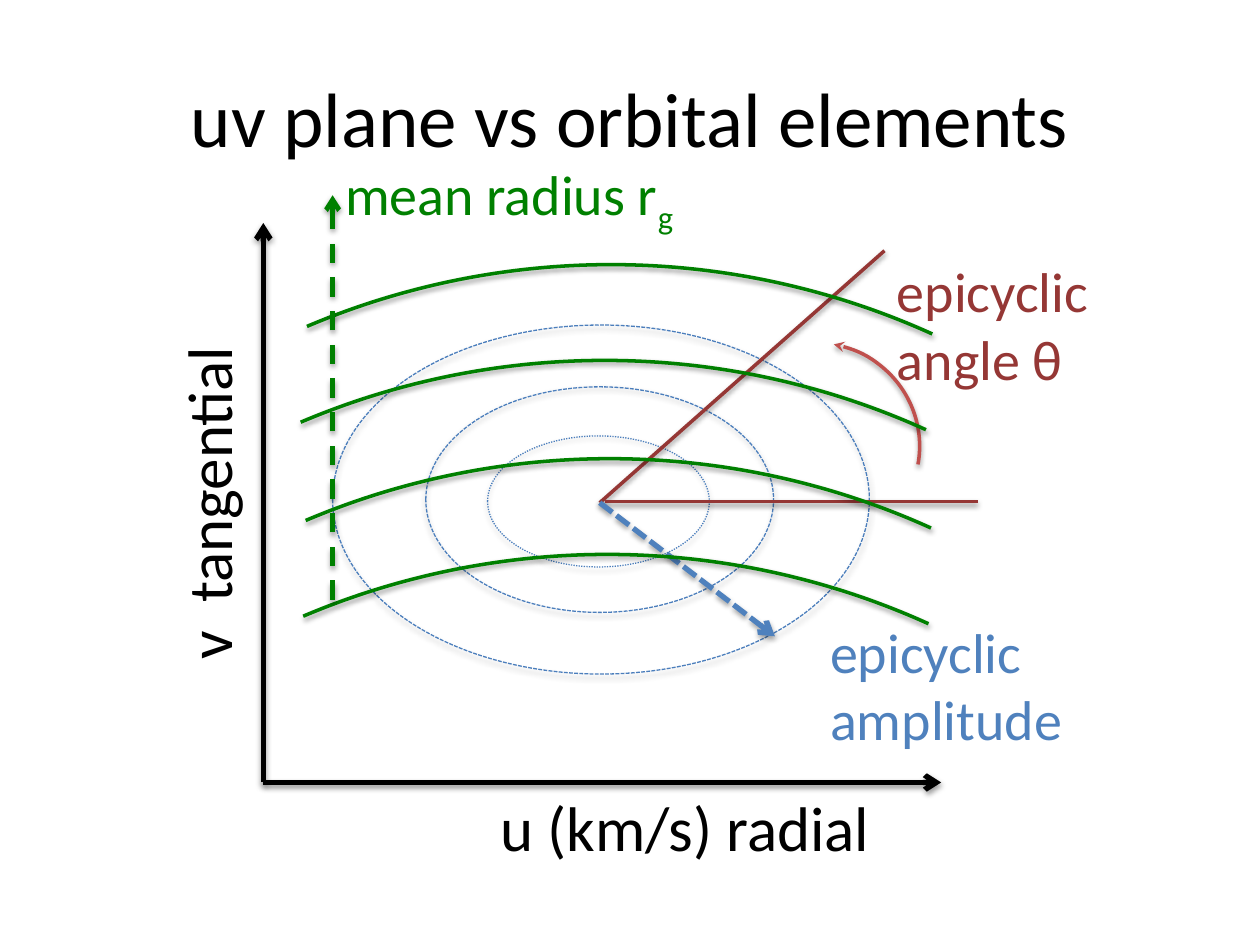
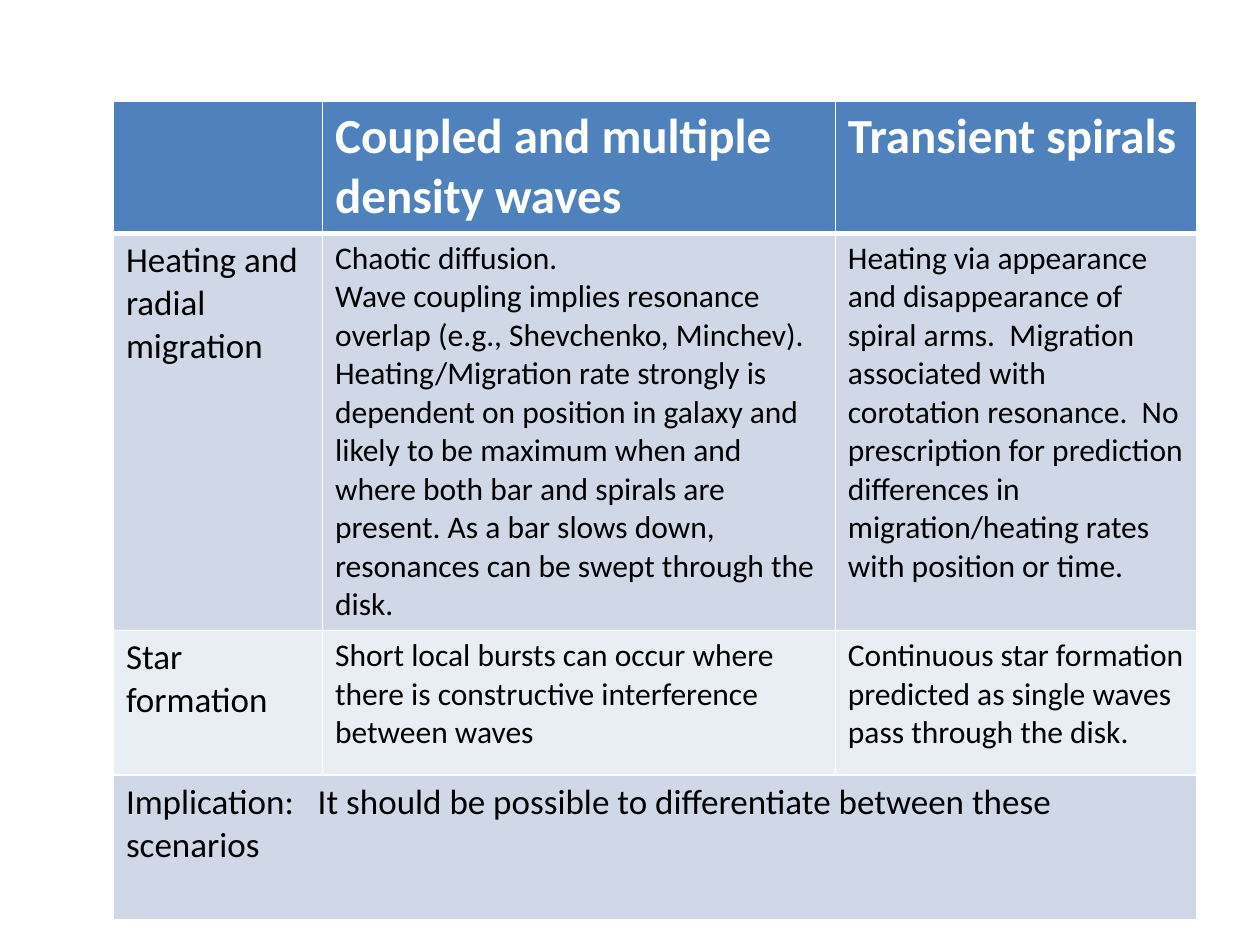
from lxml import etree
from pptx import Presentation
from pptx.dml.color import RGBColor
from pptx.enum.dml import MSO_LINE
from pptx.enum.shapes import MSO_CONNECTOR, MSO_SHAPE
from pptx.enum.text import MSO_ANCHOR, PP_ALIGN
from pptx.oxml import parse_xml
from pptx.oxml.ns import nsdecls, qn
from pptx.util import Inches, Pt

STRAIGHT = MSO_CONNECTOR.STRAIGHT
ARC, OVAL = MSO_SHAPE.ARC, MSO_SHAPE.OVAL
DASH, SHORT, DOT = MSO_LINE.DASH, MSO_LINE.SQUARE_DOT, MSO_LINE.ROUND_DOT
MIDDLE, CENTER = MSO_ANCHOR.MIDDLE, PP_ALIGN.CENTER

HEX = {
    "black": "000000", "white": "FFFFFF", "ring": "4B7EBC",
    "blue": "4F81BD", "red": "953735", "rose": "C0504D",
    "green": "008000", "band": "D0D8E8", "pale": "E9EDF4",
}
HEAD = {"size": Pt(28), "bold": True}
LABEL = {"size": Pt(20), "bold": False}
BODY = {"size": Pt(18), "bold": False}

ROWS = [
    ["", "Coupled and multiple density waves", "Transient spirals"],
    ["Heating and radial migration",
     "Chaotic diffusion.\n"
     "Wave coupling implies resonance overlap (e.g., Shevchenko, Minchev). "
     "Heating/Migration rate strongly is dependent on position in galaxy and "
     "likely to be maximum when and where both bar and spirals are present. "
     "As a bar slows down, resonances can be swept through the disk.",
     "Heating via appearance and disappearance of spiral arms.  Migration "
     "associated with corotation resonance.  No prescription for prediction "
     "differences in migration/heating rates with position or time."],
    ["Star formation",
     "Short local bursts can occur where there is constructive interference "
     "between waves",
     "Continuous star formation predicted as single waves pass through the "
     "disk."],
    ["Implication:   It should be possible to differentiate between these  "
     "scenarios", "", ""],
]


def color(name):
    return RGBColor.from_string(HEX[name])


def style(font, hue, form):
    for key, value in {"name": "Calibri", **form}.items():
        setattr(font, key, value)
    font.color.rgb = color(hue)


def shade(shape, tone=38, gap=1.6):
    shape._element.spPr.append(parse_xml(
        f'<a:effectLst {nsdecls("a")}><a:outerShdw blurRad="{Pt(3.1)}" '
        f'dist="{Pt(gap)}" dir="5400000" rotWithShape="0">'
        f'<a:srgbClr val="{HEX["black"]}"><a:alpha val="{tone * 1000}"/>'
        '</a:srgbClr></a:outerShdw></a:effectLst>'))


def stroke(shape, hue, width, dash=None, end=None, tip="arrow"):
    line = shape.line
    line.color.rgb = color(hue)
    line.width = Pt(width)
    if dash:
        line.dash_style = dash
    if end:
        etree.SubElement(line._get_or_add_ln(), qn(f"a:{end}"), type=tip)


def ray(slide, start, stop, hue, width, dash=None, end=None):
    points = [Inches(v) for v in (*start, *stop)]
    line = slide.shapes.add_connector(STRAIGHT, *points)
    stroke(line, hue, width, dash, end)
    shade(line)


def curve(slide, kind, box, hue, width, turn=0, span=(), **form):
    shape = slide.shapes.add_shape(kind, *[Inches(v) for v in box])
    shape.rotation = turn
    for i, value in enumerate(span):
        shape.adjustments[i] = value
    shape.fill.background()
    stroke(shape, hue, width, **form)
    if kind == OVAL:
        shade(shape, 35, 1.8)
    else:
        shade(shape)


def label(slide, box, text, size, hue, turn=0, sub=""):
    shape = slide.shapes.add_textbox(*[Inches(v) for v in box])
    shape.rotation = turn
    frame = shape.text_frame
    frame.word_wrap = True
    para = frame.paragraphs[0]
    for part in filter(None, (text, sub)):
        run = para.add_run()
        run.text = part
        style(run.font, hue, {"size": Pt(size)})
    if sub:
        run._r.get_or_add_rPr().set("baseline", "-25000")
    return frame


def border(cell, row):
    props = cell._tc.get_or_add_tcPr()
    thick = {(0, "B"): 3, (1, "T"): 3}
    for side in "LRTB":
        width = Pt(thick.get((row, side), 1))
        props.append(parse_xml(
            f'<a:ln{side} {nsdecls("a")} w="{width}"><a:solidFill>'
            f'<a:srgbClr val="{HEX["white"]}"/></a:solidFill></a:ln{side}>'))


def plane(slide):
    title = label(slide, (0.5, 0.3, 9, 1.25),
                  "uv plane vs orbital elements", 44, "black")
    title.vertical_anchor = MIDDLE
    title.paragraphs[0].alignment = CENTER

    for tip in ((7.47, 6.21), (2.09, 1.77)):
        ray(slide, (2.09, 6.21), tip, "black", 3, end="tailEnd")
    for box, dash in (((3.38, 3.07, 2.76, 1.79), SHORT),
                      ((3.87, 3.46, 1.76, 1.04), DOT),
                      ((2.64, 2.58, 4.26, 2.77), SHORT)):
        curve(slide, OVAL, box, "ring", 0.75, dash=dash)
    label(slide, (3.87, 6.21, 3.89, 0.71), "u (km/s) radial", 36, "black")
    label(slide, (-0.03, 3.3, 3.36, 0.71), "v  tangential", 36, "black", 270)

    ray(slide, (4.76, 3.99), (7.02, 1.99), "red", 2)
    ray(slide, (4.8, 3.98), (7.76, 3.98), "red", 2)
    label(slide, (7.02, 1.99, 2.53, 1.18), "epicyclic angle θ", 32, "red")
    curve(slide, ARC, (5.64, 2.72, 1.66, 1.63), "rose", 2, 10.5,
          end="headEnd", tip="stealth")
    ray(slide, (4.76, 3.99), (6.15, 5.05), "blue", 3, SHORT, "tailEnd")
    label(slide, (6.49, 4.85, 2.53, 1.18), "epicyclic amplitude", 32, "blue")

    for left, top in ((-1.38, 2.86), (-1.33, 2.1),
                      (-1.34, 3.64), (-1.36, 4.4)):
        curve(slide, ARC, (left, top, 12.36, 12.36), "green", 2, 315,
              (175.21, 203.62))
    ray(slide, (2.64, 4.76), (2.64, 1.55), "green", 2.75, DASH, "tailEnd")
    label(slide, (2.64, 1.22, 6.55, 0.64), "mean radius r", 32, "green",
          sub="g")


def grid(slide):
    widths, heights = (1.66, 4.07, 2.87), (0.99, 2.69, 1.15, 1.15)
    box = [Inches(v) for v in (0.9, 0.8, sum(widths), sum(heights))]
    table = slide.shapes.add_table(len(heights), len(widths), *box).table
    for col, width in zip(table.columns, widths):
        col.width = Inches(width)
    for row, height in zip(table.rows, heights):
        row.height = Inches(height)
    fills = ("blue", "band", "pale", "band")
    for r, texts in enumerate(ROWS):
        for c, text in enumerate(texts):
            cell = table.cell(r, c)
            border(cell, r)
            cell.fill.solid()
            cell.fill.fore_color.rgb = color(fills[r])
            if not text:
                continue
            cell.text = text
            form = HEAD if r == 0 else BODY if c else LABEL
            for para in cell.text_frame.paragraphs:
                for run in para.runs:
                    style(run.font, "black" if r else "white", form)
    table.cell(3, 0).merge(table.cell(3, 2))


def main():
    deck = Presentation()
    deck.slide_width, deck.slide_height = Inches(10), Inches(7.5)
    for draw in (plane, grid):
        draw(deck.slides.add_slide(deck.slide_layouts[6]))
    deck.save("out.pptx")


if __name__ == "__main__":
    main()
